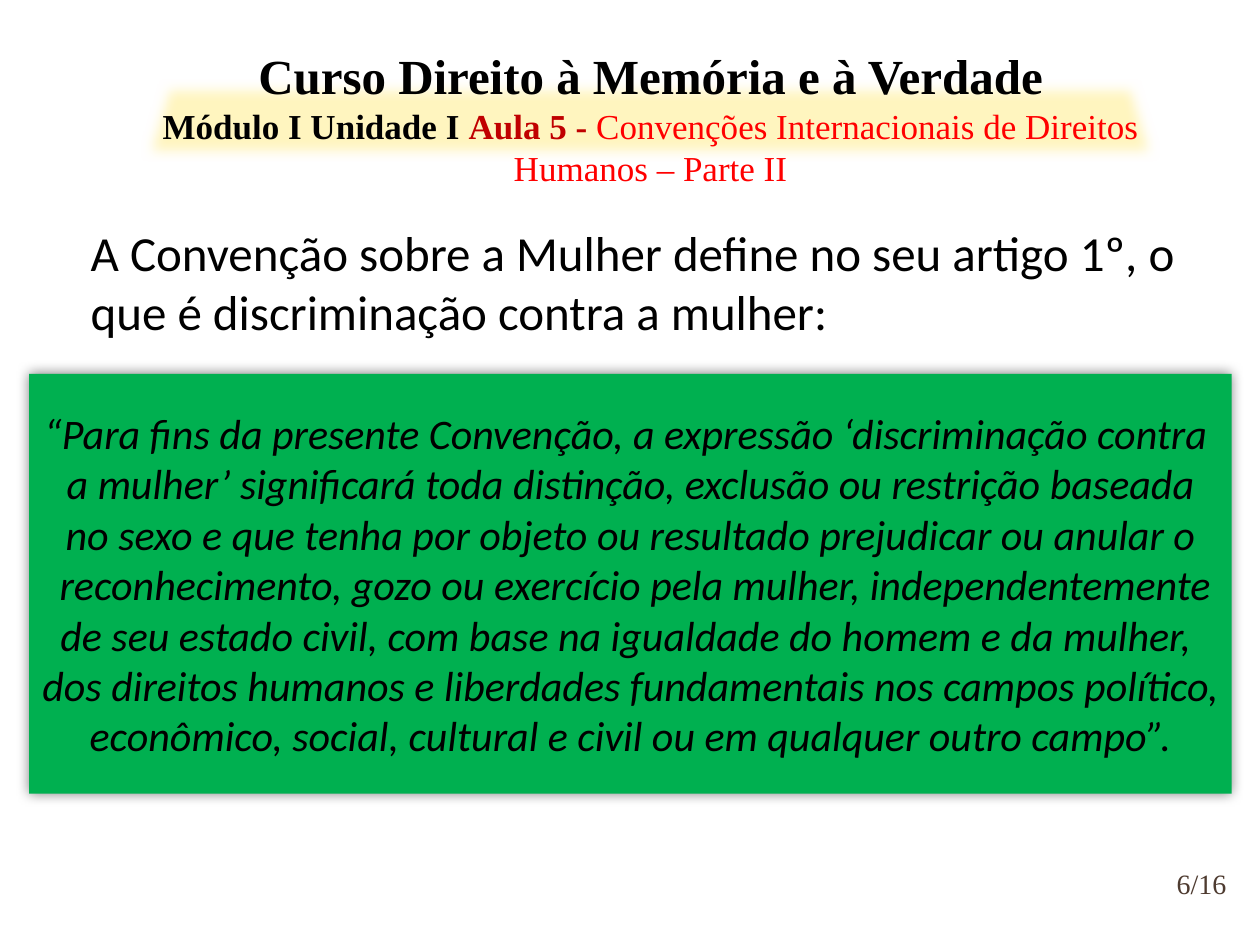
from lxml.etree import SubElement
from pptx import Presentation
from pptx.dml.color import RGBColor
from pptx.enum.shapes import MSO_SHAPE as Shape
from pptx.enum.text import MSO_ANCHOR as Anchor, PP_ALIGN as Align
from pptx.oxml.ns import qn
from pptx.util import Cm, Pt

THEME = {
    "heading": {"name": "Times New Roman", "size": Pt(28), "bold": True, "color": "000000"},
    "module": {"name": "Times New Roman", "size": Pt(20), "bold": True, "color": "000000"},
    "lesson": {"name": "Times New Roman", "size": Pt(20), "bold": True, "color": "C00000"},
    "topic": {"name": "Times New Roman", "size": Pt(20), "bold": False, "color": "FF0000"},
    "intro": {"name": "Calibri", "size": Pt(28), "color": "000000"},
    "quote": {"name": "Calibri", "size": Pt(24), "italic": True, "color": "000000"},
    "page": {"name": "Times New Roman", "size": Pt(16), "color": "4E3B30"},
    "band_fill": "FFF5BF",
    "quote_fill": "00B050",
    "shadow": "000000",
}

# Each paragraph is a list of (style, text) spans.
TITLE = [
    [("heading", "Curso Direito à Memória e à Verdade")],
    [
        ("module", "Módulo I Unidade I "),
        ("lesson", "Aula 5 - "),
        ("topic", "Convenções Internacionais de Direitos Humanos – Parte II"),
    ],
]
INTRO = [[("intro", "A Convenção sobre a Mulher define no seu artigo 1º, o que é "
                    "discriminação contra a mulher:")]]
QUOTE = [[("quote", line)] for line in (
    "“Para fins da presente Convenção, a expressão ‘discriminação contra ",
    "a mulher’ significará toda distinção, exclusão ou restrição baseada no sexo "
    "e que tenha por objeto ou resultado prejudicar ou anular o",
    " reconhecimento, gozo ou exercício pela mulher, independentemente de seu "
    "estado civil, com base na igualdade do homem e da mulher, ",
    "dos direitos humanos e liberdades fundamentais nos campos político, "
    "econômico, social, cultural e civil ou em qualquer outro campo”.",
)]
PAGE_NUMBER = [[("page", "6/16")]]

# Left, top, width, height in centimetres.
PLACES = {
    "band": (2.7, 1.6, 20.8, 1.65),
    "title": (2.6, 0.8, 21.03, 3.17),
    "intro": (1.58, 4.37, 22.43, 2.64),
    "quote": (0.59, 7.54, 24.24, 8.46),
    "page": (23.37, 17.17, 1.7, 1.27),
}


def place(name):
    return [Cm(length) for length in PLACES[name]]


def write(shape, paragraphs, align=Align.CENTER, anchor=Anchor.TOP, inset=None):
    frame = shape.text_frame
    frame.word_wrap = True
    frame.vertical_anchor = anchor
    if inset is not None:
        for side in ("left", "top", "right", "bottom"):
            setattr(frame, f"margin_{side}", inset)
    for index, spans in enumerate(paragraphs):
        para = frame.add_paragraph() if index else frame.paragraphs[0]
        para.alignment = align
        for style, text in spans:
            span = para.add_run()
            span.text = text
            for key, value in THEME[style].items():
                if key == "color":
                    span.font.color.rgb = RGBColor.from_string(value)
                else:
                    setattr(span.font, key, value)


def add_filled(page, kind, name, color):
    """Add a borderless shape and return it with its empty effect list."""
    shape = page.shapes.add_shape(kind, *place(name))
    shape.fill.solid()
    shape.fill.fore_color.rgb = RGBColor.from_string(color)
    shape.line.fill.background()
    shape.shadow.inherit = False
    return shape, shape._element.spPr.find(qn("a:effectLst"))


def add_band(page):
    band, effects = add_filled(page, Shape.TRAPEZOID, "band", THEME["band_fill"])
    band.adjustments[0] = 0.3
    SubElement(effects, qn("a:softEdge"), rad=str(Pt(7)))


def add_quote(page):
    box, effects = add_filled(page, Shape.RECTANGLE, "quote", THEME["quote_fill"])
    shadow = SubElement(effects, qn("a:outerShdw"), blurRad=str(Pt(7.5)), dist="0",
                        dir="0", algn="ctr", rotWithShape="0")
    color = SubElement(shadow, qn("a:srgbClr"), val=THEME["shadow"])
    SubElement(color, qn("a:alpha"), val="50000")
    write(box, QUOTE, anchor=Anchor.MIDDLE)


def main():
    deck = Presentation()
    deck.slide_width, deck.slide_height = Cm(25.4), Cm(19.05)
    page = deck.slides.add_slide(deck.slide_layouts[6])
    add_band(page)
    for name, paragraphs, options in (
        ("intro", INTRO, {"align": Align.LEFT}),
        ("page", PAGE_NUMBER, {"anchor": Anchor.MIDDLE, "inset": 0}),
        ("title", TITLE, {}),
    ):
        write(page.shapes.add_textbox(*place(name)), paragraphs, **options)
    add_quote(page)
    deck.save("out.pptx")


if __name__ == "__main__":
    main()
